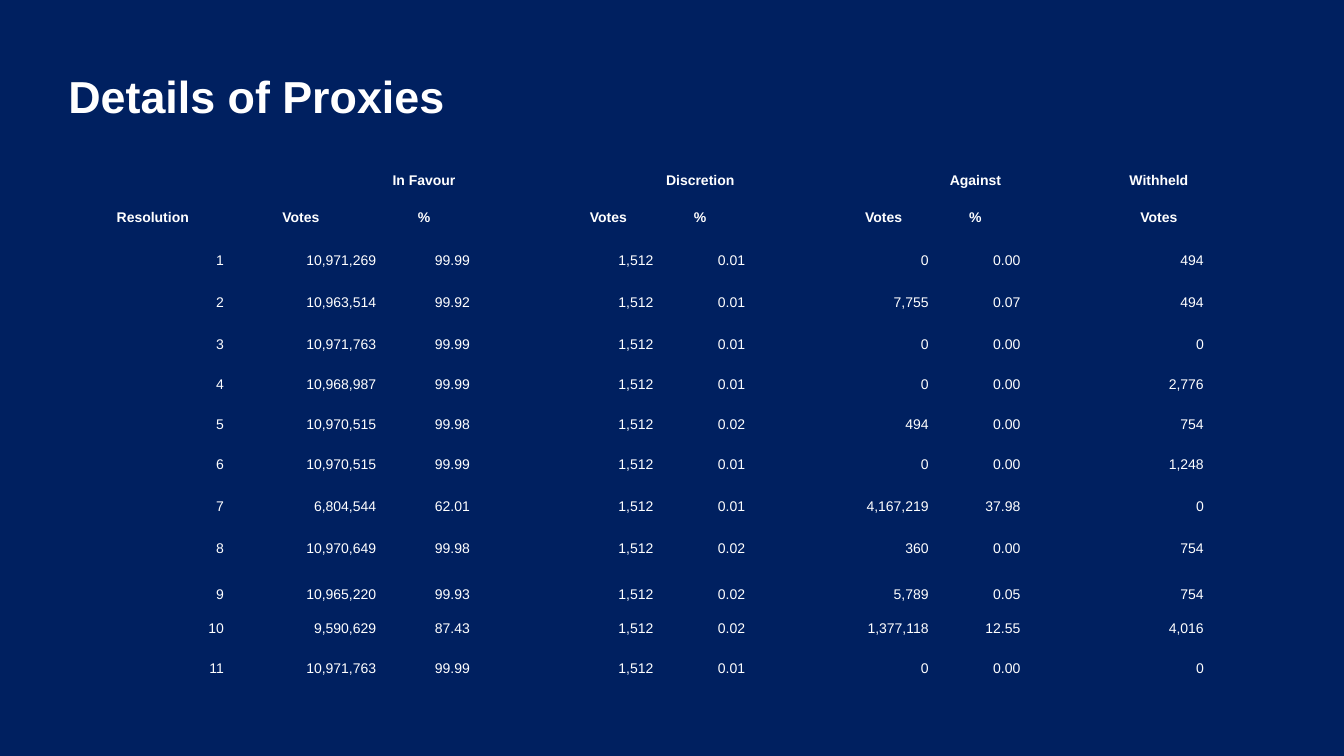
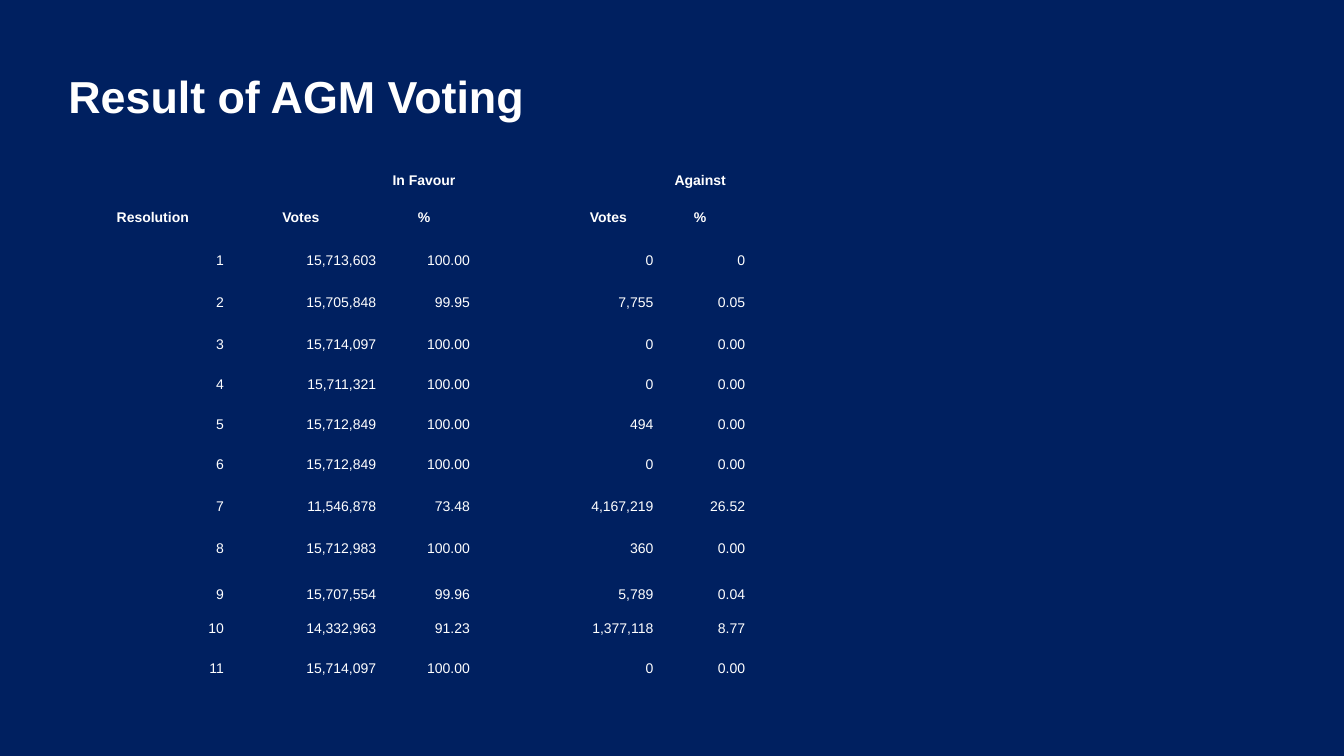
from dataclasses import dataclass

from pptx import Presentation
from pptx.dml.color import RGBColor
from pptx.enum.text import MSO_ANCHOR as Anchor, PP_ALIGN as Align
from pptx.oxml.ns import qn
from pptx.slide import Slide
from pptx.table import _Cell as Cell
from pptx.util import Inches, Pt


# Shared look
@dataclass(frozen=True)
class Theme:
    background: RGBColor = RGBColor(0x00, 0x20, 0x60)
    text: RGBColor = RGBColor(0xFF, 0xFF, 0xFF)
    font: str = "Arial"
    title_size: Pt = Pt(32)
    table_size: Pt = Pt(10)


THEME = Theme()
PLAIN_STYLE = "{2D5ABB26-0587-4C30-8999-92F81FD0307C}"  # no style, no grid
FIRST_WIDTHS = [1.43, 1.51, 0.93]
OTHER_WIDTH = 0.91
ROW_HEIGHTS = [0.55, 0.37, 0.42, 0.42, 0.42, 0.4, 0.39, 0.4, 0.42, 0.41, 0.46, 0.34, 0.39]
RESOLUTIONS = [str(n) for n in range(1, 12)]


# Content
@dataclass(frozen=True)
class VoteGroup:
    name: str
    votes: str
    percent: str = ""

    def columns(self) -> list[list[str]]:
        """Two header cells and the values; the name sits over the last column."""
        cols = [["", "Votes", *self.votes.split()]]
        if self.percent:
            cols.append(["", "%", *self.percent.split()])
        cols[-1][0] = self.name
        return cols


@dataclass(frozen=True)
class VoteSlide:
    title: str
    groups: list[VoteGroup]


AGAINST_VOTES = "0 7,755 0 0 494 0 4,167,219 360 5,789 1,377,118 0"

SLIDES = [
    VoteSlide("Details of Proxies", [
        VoteGroup("In Favour",
                  "10,971,269 10,963,514 10,971,763 10,968,987 10,970,515 10,970,515 "
                  "6,804,544 10,970,649 10,965,220 9,590,629 10,971,763",
                  "99.99 99.92 99.99 99.99 99.98 99.99 62.01 99.98 99.93 87.43 99.99"),
        VoteGroup("Discretion",
                  "1,512 " * len(RESOLUTIONS),
                  "0.01 0.01 0.01 0.01 0.02 0.01 0.01 0.02 0.02 0.02 0.01"),
        VoteGroup("Against", AGAINST_VOTES,
                  "0.00 0.07 0.00 0.00 0.00 0.00 37.98 0.00 0.05 12.55 0.00"),
        VoteGroup("Withheld", "494 494 0 2,776 754 1,248 0 754 754 4,016 0"),
    ]),
    VoteSlide("Result of AGM Voting", [
        VoteGroup("In Favour",
                  "15,713,603 15,705,848 15,714,097 15,711,321 15,712,849 15,712,849 "
                  "11,546,878 15,712,983 15,707,554 14,332,963 15,714,097",
                  "100.00 99.95 100.00 100.00 100.00 100.00 73.48 100.00 99.96 91.23 100.00"),
        VoteGroup("Against", AGAINST_VOTES,
                  "0 0.05 0.00 0.00 0.00 0.00 26.52 0.00 0.04 8.77 0.00"),
    ]),
]


# Drawing
def style_font(font, size: Pt, bold: bool) -> None:
    font.name, font.size, font.bold = THEME.font, size, bold
    font.color.rgb = THEME.text


def add_title(s: Slide, text: str) -> None:
    tf = s.shapes.add_textbox(Inches(0.58), Inches(0.64), Inches(7.2), Inches(0.68)).text_frame
    tf.word_wrap = True
    tf.vertical_anchor = Anchor.MIDDLE
    p = tf.paragraphs[0]
    p.text = text
    p.line_spacing = 0.9
    style_font(p.font, THEME.title_size, True)


def fill_cell(cell: Cell, text: str, header: bool) -> None:
    cell.fill.background()
    cell.margin_left = cell.margin_right = cell.margin_top = Inches(0.01)
    cell.margin_bottom = 0
    cell.vertical_anchor = Anchor.BOTTOM
    p = cell.text_frame.paragraphs[0]
    if text:
        p.text = text
    p.alignment = Align.CENTER if header else Align.RIGHT
    style_font(p.font, THEME.table_size, header)


def add_vote_table(s: Slide, groups: list[VoteGroup]) -> None:
    # Resolution numbers, then the groups with an empty column between them
    columns = [["", "Resolution", *RESOLUTIONS]]
    for i, group in enumerate(groups):
        if i:
            columns.append([""] * len(ROW_HEIGHTS))
        columns += group.columns()
    widths = FIRST_WIDTHS + [OTHER_WIDTH] * (len(columns) - len(FIRST_WIDTHS))

    table = s.shapes.add_table(len(ROW_HEIGHTS), len(columns), Inches(0.8), Inches(1.32),
                               Inches(sum(widths)), Inches(sum(ROW_HEIGHTS))).table
    table.first_row = table.horz_banding = False
    table._tbl.tblPr.find(qn("a:tableStyleId")).text = PLAIN_STYLE
    for row, height in zip(table.rows, ROW_HEIGHTS):
        row.height = Inches(height)
    for c, (values, width) in enumerate(zip(columns, widths)):
        table.columns[c].width = Inches(width)
        for r, text in enumerate(values):
            fill_cell(table.cell(r, c), text, header=r < 2)


def main() -> None:
    prs = Presentation()
    prs.slide_width, prs.slide_height = Inches(13.33), Inches(7.5)
    for content in SLIDES:
        s = prs.slides.add_slide(prs.slide_layouts[6])
        s.background.fill.solid()
        s.background.fill.fore_color.rgb = THEME.background
        add_title(s, content.title)
        add_vote_table(s, content.groups)
    prs.save("out.pptx")


if __name__ == "__main__":
    main()
